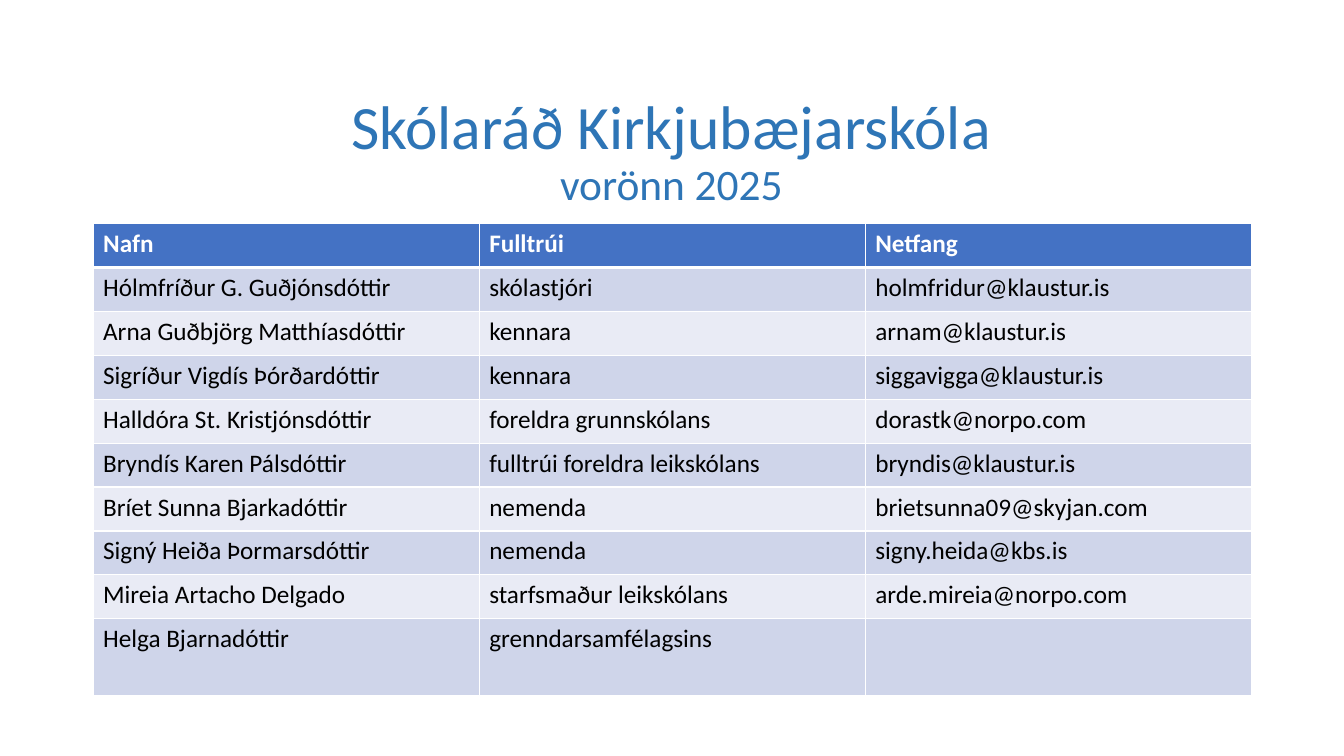
"""Build the school council slide with its title and member table."""
from dataclasses import astuple, dataclass

from lxml import etree
from pptx import Presentation
from pptx.dml.color import RGBColor
from pptx.enum.text import MSO_ANCHOR, PP_ALIGN
from pptx.oxml.ns import qn
from pptx.table import _Cell
from pptx.text.text import _Paragraph
from pptx.util import Pt

LEFT, CENTER = PP_ALIGN.LEFT, PP_ALIGN.CENTER
MIDDLE = MSO_ANCHOR.MIDDLE
FONT = "Calibri"
COLORS = {
    "title": "2E75B6",
    "header": "4472C4",
    "odd": "CFD5EA",
    "even": "E9EBF5",
    "white": "FFFFFF",
    "black": "000000",
}
COLUMN_WIDTH, ROW_HEIGHT, LAST_ROW_HEIGHT = 275.8, 31.36, 54.7
THIN, THICK = 1, 3


@dataclass(frozen=True)
class Member:
    name: str
    role: str
    email: str


HEADER = Member("Nafn", "Fulltrúi", "Netfang")
MEMBERS = [
    Member("Hólmfríður G. Guðjónsdóttir", "skólastjóri", "holmfridur@klaustur.is"),
    Member("Arna Guðbjörg Matthíasdóttir", "kennara", "arnam@klaustur.is"),
    Member("Sigríður Vigdís Þórðardóttir", "kennara", "siggavigga@klaustur.is"),
    Member("Halldóra St. Kristjónsdóttir", "foreldra grunnskólans", "dorastk@norpo.com"),
    Member("Bryndís Karen Pálsdóttir", "fulltrúi foreldra leikskólans", "bryndis@klaustur.is"),
    Member("Bríet Sunna Bjarkadóttir", "nemenda", "brietsunna09@skyjan.com"),
    Member("Signý Heiða Þormarsdóttir", "nemenda", "signy.heida@kbs.is"),
    Member("Mireia Artacho Delgado", "starfsmaður leikskólans", "arde.mireia@norpo.com"),
    Member("Helga Bjarnadóttir", "grenndarsamfélagsins", ""),
]


def write(p: _Paragraph, text: str, *, size: float = 18, color: str = "black",
          bold: bool = False, align: PP_ALIGN = LEFT, spacing: float = 1.0) -> None:
    p.alignment = align
    p.line_spacing = spacing
    p.font.size = Pt(size)
    if text:
        r = p.add_run()
        r.text = text
        r.font.name = FONT
        r.font.size = Pt(size)
        r.font.bold = bold
        r.font.color.rgb = RGBColor.from_string(COLORS[color])


def add_borders(cell: _Cell, top: float, bottom: float) -> None:
    tc_pr = cell._tc.get_or_add_tcPr()
    for side, width in (("L", THIN), ("R", THIN), ("T", top), ("B", bottom)):
        ln = etree.SubElement(tc_pr, qn(f"a:ln{side}"), w=str(Pt(width)))
        fill = etree.SubElement(ln, qn("a:solidFill"))
        etree.SubElement(fill, qn("a:srgbClr"), val=COLORS["white"])


def fill_cell(cell: _Cell, text: str, row: int) -> None:
    is_header = row == 0
    add_borders(cell, THICK if row == 1 else THIN, THICK if is_header else THIN)
    fill = "header" if is_header else "odd" if row % 2 else "even"
    cell.fill.solid()
    cell.fill.fore_color.rgb = RGBColor.from_string(COLORS[fill])
    write(cell.text_frame.paragraphs[0], text,
          color="white" if is_header else "black", bold=is_header)


def main() -> None:
    prs = Presentation()
    prs.slide_width, prs.slide_height = Pt(960), Pt(540)
    s = prs.slides.add_slide(prs.slide_layouts[6])

    tf = s.shapes.add_textbox(Pt(65.5), Pt(58.3), Pt(828), Pt(101.5)).text_frame
    tf.word_wrap = True
    tf.vertical_anchor = MIDDLE
    write(tf.paragraphs[0], "Skólaráð Kirkjubæjarskóla",
          size=44, color="title", align=CENTER, spacing=0.9)
    write(tf.add_paragraph(), "vorönn 2025",
          size=31, color="title", align=CENTER, spacing=0.9)

    rows = [HEADER, *MEMBERS]
    height = ROW_HEIGHT * len(MEMBERS) + LAST_ROW_HEIGHT
    table = s.shapes.add_table(len(rows), 3, Pt(66.5), Pt(159.8),
                               Pt(3 * COLUMN_WIDTH), Pt(height)).table
    for column in table.columns:
        column.width = Pt(COLUMN_WIDTH)
    for i, member in enumerate(rows):
        is_last = i == len(rows) - 1
        table.rows[i].height = Pt(LAST_ROW_HEIGHT if is_last else ROW_HEIGHT)
        for j, text in enumerate(astuple(member)):
            fill_cell(table.cell(i, j), text, i)

    prs.save("out.pptx")


if __name__ == "__main__":
    main()
